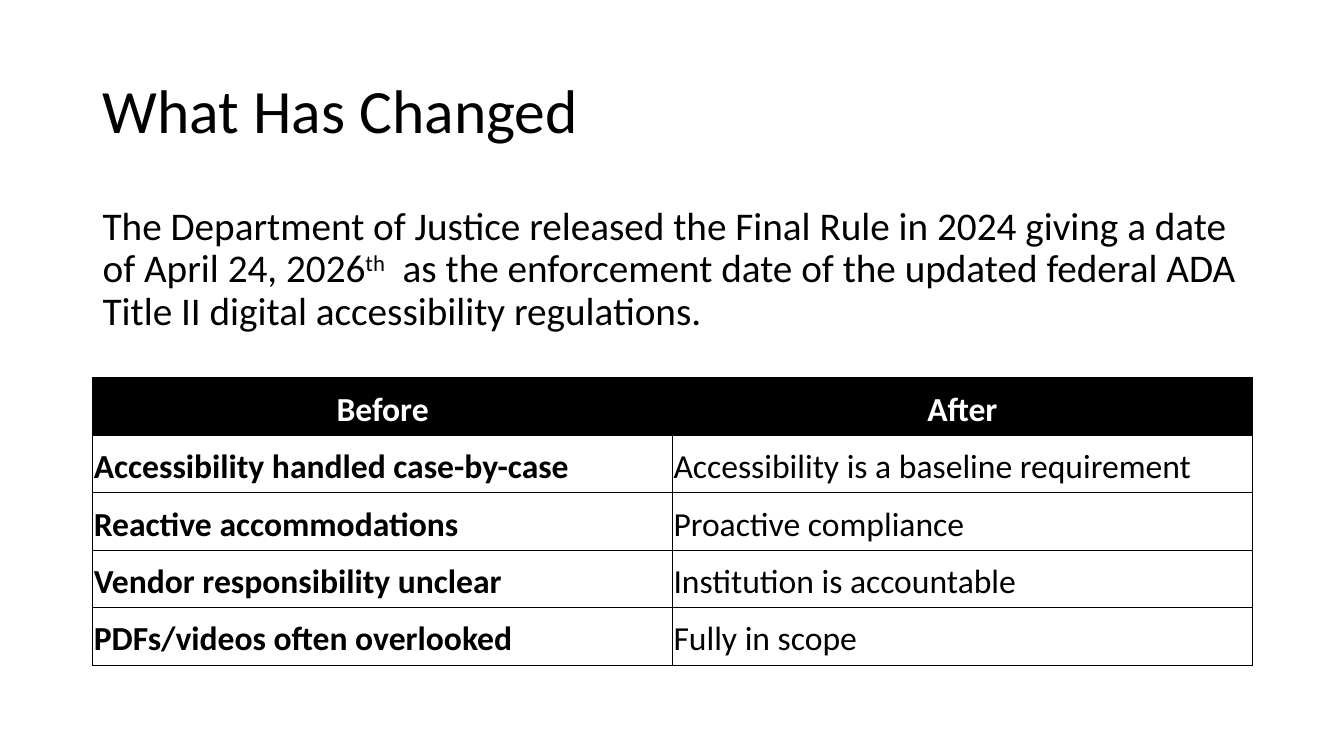
from lxml import etree
from pptx import Presentation
from pptx.dml.color import RGBColor
from pptx.enum.text import MSO_ANCHOR, PP_ALIGN
from pptx.oxml.ns import qn
from pptx.util import Inches, Pt

TITLE = "What Has Changed"
INTRO = [
    ("The Department of Justice released the Final Rule in 2024 giving a date of April 24, 2026", False),
    ("th", True),
    ("  as the enforcement date of the updated federal ADA Title II digital accessibility regulations.", False),
]
ROWS = [
    ("Before", "After"),
    ("Accessibility handled case-by-case", "Accessibility is a baseline requirement"),
    ("Reactive accommodations", "Proactive compliance"),
    ("Vendor responsibility unclear", "Institution is accountable"),
    ("PDFs/videos often overlooked", "Fully in scope"),
]

BLACK = RGBColor(0, 0, 0)
WHITE = RGBColor(255, 255, 255)
FONT = "Calibri"
MIDDLE, TOP = MSO_ANCHOR.MIDDLE, MSO_ANCHOR.TOP
LEFT, CENTER = PP_ALIGN.LEFT, PP_ALIGN.CENTER
MARGIN, WIDTH = Inches(0.92), Inches(11.5)
TABLE_TOP, ROW_HEIGHT = Inches(3.75), Inches(0.57)
CELL_INSET = Inches(0.01)


def add_text(para, text, size=24, color=BLACK, bold=False, raised=False,
             align=LEFT, spacing=0.9, after=0):
    para.alignment = align
    para.line_spacing = spacing
    para.space_before = Pt(0)
    para.space_after = Pt(after)
    span = para.add_run()
    span.text = text
    span.font.name = FONT
    span.font.size = Pt(size)
    span.font.bold = bold
    span.font.color.rgb = color
    if raised:
        span.font._element.set("baseline", "30000")


def add_borders(cell):
    properties = cell._tc.get_or_add_tcPr()
    for side in ("lnL", "lnR", "lnT", "lnB"):
        line = etree.SubElement(properties, qn(f"a:{side}"), w=str(Pt(1)))
        fill = etree.SubElement(line, qn("a:solidFill"))
        etree.SubElement(fill, qn("a:srgbClr"), val=str(BLACK))


def format_cell(cell, text, header, bold):
    add_borders(cell)
    cell.fill.solid()
    cell.fill.fore_color.rgb = BLACK if header else WHITE
    cell.vertical_anchor = MIDDLE
    cell.margin_left = cell.margin_right = CELL_INSET
    cell.margin_top = cell.margin_bottom = CELL_INSET
    add_text(cell.text_frame.paragraphs[0], text, bold=bold,
             color=WHITE if header else BLACK,
             align=CENTER if header else LEFT, spacing=1.15, after=8)


def main():
    deck = Presentation()
    deck.slide_width, deck.slide_height = Inches(13.33), Inches(7.5)
    page = deck.slides.add_slide(deck.slide_layouts[5])

    title = page.shapes.title
    title.left, title.top = MARGIN, Inches(0.4)
    title.width, title.height = WIDTH, Inches(1.45)
    title.text_frame.vertical_anchor = MIDDLE
    add_text(title.text_frame.paragraphs[0], TITLE, size=44)

    intro = page.shapes.add_textbox(MARGIN, Inches(2), WIDTH, Inches(1.5))
    intro.text_frame.word_wrap = True
    intro.text_frame.vertical_anchor = TOP
    for text, raised in INTRO:
        add_text(intro.text_frame.paragraphs[0], text, size=28, raised=raised)

    table = page.shapes.add_table(len(ROWS), len(ROWS[0]), MARGIN, TABLE_TOP,
                                  WIDTH, ROW_HEIGHT * len(ROWS)).table
    for row, texts in enumerate(ROWS):
        for column, text in enumerate(texts):
            format_cell(table.cell(row, column), text, header=row == 0,
                        bold=row == 0 or column == 0)

    deck.save("out.pptx")


if __name__ == "__main__":
    main()
